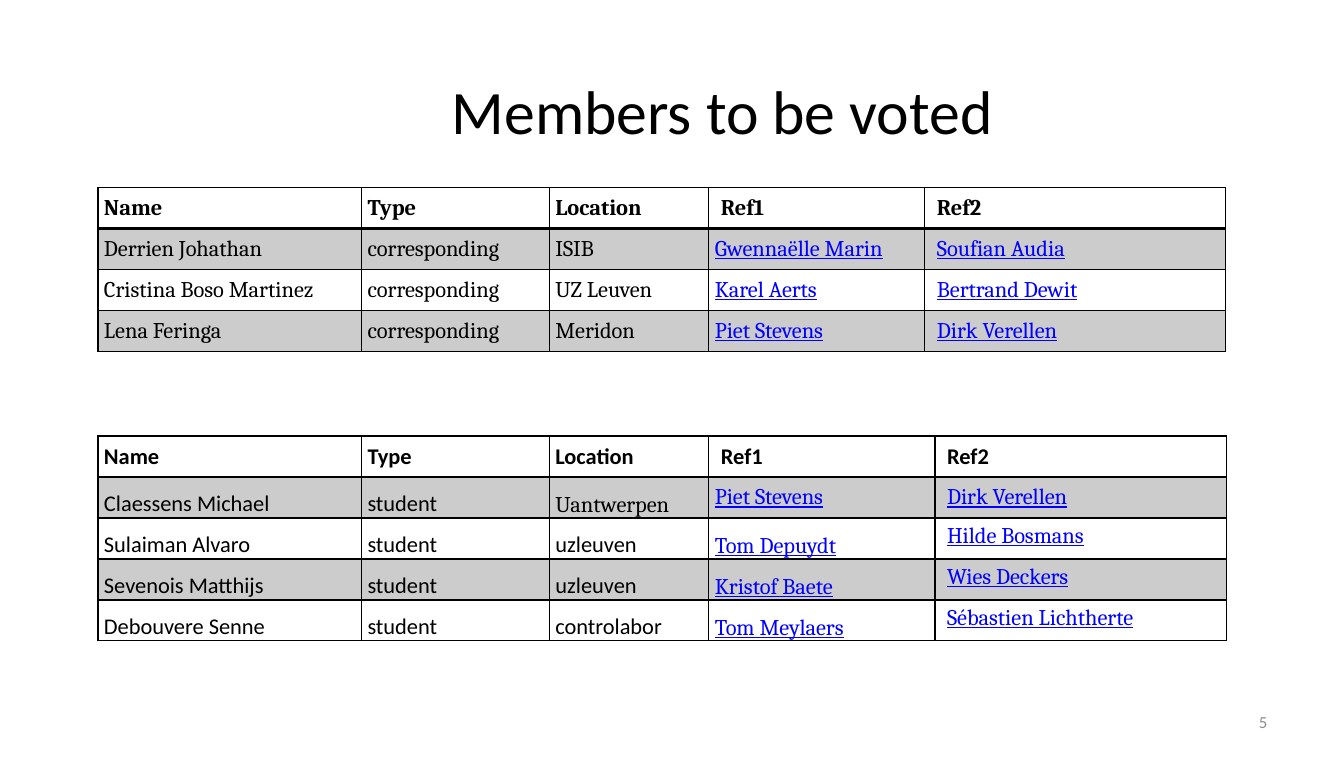
from dataclasses import dataclass

from lxml.etree import SubElement
from pptx import Presentation
from pptx.dml.color import RGBColor
from pptx.enum.text import MSO_ANCHOR, PP_ALIGN
from pptx.oxml.ns import qn
from pptx.util import Inches, Pt


@dataclass(frozen=True)
class Theme:
    black: RGBColor = RGBColor(0, 0, 0)
    link: RGBColor = RGBColor(0, 0, 255)
    muted: RGBColor = RGBColor(0x8C, 0x8C, 0x8C)
    sans: str = "Calibri"
    serif: str = "Cambria"
    title_size: int = 44
    table_size: int = 16
    number_size: int = 12
    thin_line: int = 1
    header_line: int = 2
    band_opacity: int = 20


THEME = Theme()
ROW_HEIGHT = 0.406
REFERENCE_COLUMN = 3
LAST_COLUMN = 4
HEADER = ("Name", "Type", "Location", "Ref1", "Ref2")

CORRESPONDING_MEMBERS = [
    ("Derrien Johathan", "corresponding", "ISIB", "Gwennaëlle Marin", "Soufian Audia"),
    ("Cristina Boso Martinez", "corresponding", "UZ Leuven", "Karel Aerts", "Bertrand Dewit"),
    ("Lena Feringa", "corresponding", "Meridon", "Piet Stevens", "Dirk Verellen"),
]
STUDENT_MEMBERS = [
    ("Claessens Michael", "student", "Uantwerpen", "Piet Stevens", "Dirk Verellen"),
    ("Sulaiman Alvaro", "student", "uzleuven", "Tom Depuydt", "Hilde Bosmans"),
    ("Sevenois Matthijs", "student", "uzleuven", "Kristof Baete", "Wies Deckers"),
    ("Debouvere Senne", "student", "controlabor", "Tom Meylaers", "Sébastien Lichtherte"),
]


def add_run(paragraph, text, font_name, size, color, bold=False, underline=False):
    run = paragraph.add_run()
    run.text = text
    run.font.name = font_name
    run.font.size = Pt(size)
    run.font.color.rgb = color
    run.font.bold = bold
    run.font.underline = underline


def add_label(slide, text, left, top, width, height, size, color, alignment, anchor):
    text_box = slide.shapes.add_textbox(
        Inches(left), Inches(top), Inches(width), Inches(height))
    frame = text_box.text_frame
    frame.word_wrap = True
    frame.vertical_anchor = anchor
    paragraph = frame.paragraphs[0]
    paragraph.alignment = alignment
    add_run(paragraph, text, THEME.sans, size, color)


def set_borders(cell, row):
    """Draw thin borders, with a heavier rule between header and body."""
    widths = {
        "a:lnL": THEME.thin_line,
        "a:lnR": THEME.thin_line,
        "a:lnT": THEME.header_line if row == 1 else THEME.thin_line,
        "a:lnB": THEME.header_line if row == 0 else THEME.thin_line,
    }
    properties = cell._tc.get_or_add_tcPr()
    for tag, width in widths.items():
        line = SubElement(properties, qn(tag), w=str(Pt(width)))
        fill = SubElement(line, qn("a:solidFill"))
        SubElement(fill, qn("a:srgbClr"), val=str(THEME.black))


def set_band_fill(cell, row):
    """Shade odd rows with translucent black and leave the others clear."""
    if row % 2 == 0:
        cell.fill.background()
        return
    cell.fill.solid()
    cell.fill.fore_color.rgb = THEME.black
    color = cell._tc.tcPr.find(qn("a:solidFill")).find(qn("a:srgbClr"))
    SubElement(color, qn("a:alpha"), val=str(THEME.band_opacity * 1000))


def set_margins(cell, row, column):
    wide = column == LAST_COLUMN or (row == 0 and column == REFERENCE_COLUMN)
    cell.margin_left = cell.margin_right = Inches(0.12 if wide else 0.06)
    cell.margin_top = cell.margin_bottom = Inches(0.05 if wide else 0)


def student_anchor(row, column):
    if row == 0 or (row == 1 and column >= REFERENCE_COLUMN):
        return MSO_ANCHOR.MIDDLE
    return MSO_ANCHOR.TOP if column == LAST_COLUMN else MSO_ANCHOR.BOTTOM


def student_font(row, column):
    is_reference = row > 0 and column >= REFERENCE_COLUMN
    return THEME.serif if is_reference or (row, column) == (1, 2) else THEME.sans


def corresponding_anchor(row, column):
    return MSO_ANCHOR.MIDDLE


def corresponding_font(row, column):
    return THEME.serif


def add_member_table(slide, members, top, column_widths, anchor_for, font_for):
    rows = [HEADER, *members]
    table = slide.shapes.add_table(
        len(rows), len(HEADER), Inches(0.97), Inches(top),
        Inches(sum(column_widths)), Inches(ROW_HEIGHT * len(rows))).table
    table.first_row = False
    table.horz_banding = False
    for column, width in zip(table.columns, column_widths):
        column.width = Inches(width)
    for row, values in enumerate(rows):
        table.rows[row].height = Inches(ROW_HEIGHT)
        for column, text in enumerate(values):
            cell = table.cell(row, column)
            set_borders(cell, row)
            set_band_fill(cell, row)
            set_margins(cell, row, column)
            cell.vertical_anchor = anchor_for(row, column)
            is_link = row > 0 and column >= REFERENCE_COLUMN
            add_run(cell.text_frame.paragraphs[0], text, font_for(row, column),
                    THEME.table_size, THEME.link if is_link else THEME.black,
                    bold=row == 0, underline=is_link)


def main():
    presentation = Presentation()
    presentation.slide_width = Inches(13.31)
    presentation.slide_height = Inches(7.5)
    slide = presentation.slides.add_slide(presentation.slide_layouts[6])

    add_member_table(slide, CORRESPONDING_MEMBERS, 1.86,
                     (2.61, 1.86, 1.58, 2.14, 2.98),
                     corresponding_anchor, corresponding_font)
    add_label(slide, "Members to be voted", 1.55, 0.67, 11.21, 1.75,
              THEME.title_size, THEME.black, PP_ALIGN.CENTER, MSO_ANCHOR.TOP)
    add_member_table(slide, STUDENT_MEMBERS, 4.32,
                     (2.61, 1.86, 1.58, 2.24, 2.89),
                     student_anchor, student_font)
    add_label(slide, "5", 9.54, 6.95, 3.11, 0.4,
              THEME.number_size, THEME.muted, PP_ALIGN.RIGHT, MSO_ANCHOR.MIDDLE)
    presentation.save("out.pptx")


if __name__ == "__main__":
    main()
